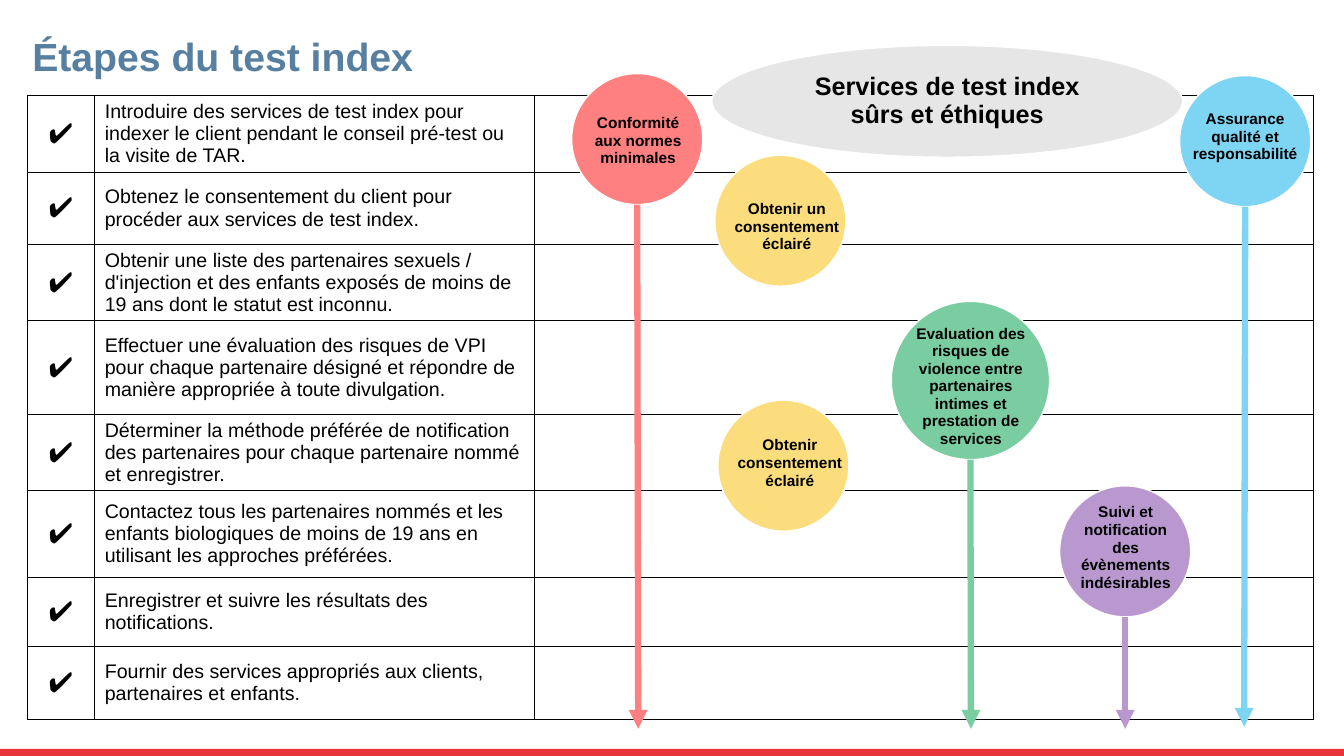
from lxml import etree
from pptx import Presentation
from pptx.dml.color import RGBColor
from pptx.enum.shapes import MSO_CONNECTOR, MSO_SHAPE
from pptx.enum.text import MSO_ANCHOR, MSO_AUTO_SIZE, PP_ALIGN
from pptx.oxml.ns import qn
from pptx.util import Inches, Pt

ELLIPSE, RECTANGLE = MSO_SHAPE.OVAL, MSO_SHAPE.RECTANGLE
STRAIGHT = MSO_CONNECTOR.STRAIGHT
MIDDLE, BOTTOM = MSO_ANCHOR.MIDDLE, MSO_ANCHOR.BOTTOM
LEFT, CENTER = PP_ALIGN.LEFT, PP_ALIGN.CENTER

TITLE = "Étapes du test index"
HEADING = "Services de test index sûrs et éthiques"
CHECK = "✔"
HEADER_HEIGHT = 0.57
COLUMN_WIDTHS = (0.67, 4.36, 7.73)

# Step, row height
STEPS = [
    ("Introduire des services de test index pour indexer le client pendant "
     "le conseil pré-test ou la visite de TAR.", 0.72),
    ("Obtenez le consentement du client pour procéder aux services de test index.", 0.72),
    ("Obtenir une liste des partenaires sexuels / d'injection et des enfants "
     "exposés de moins de 19 ans dont le statut est inconnu.", 0.72),
    ("Effectuer une évaluation des risques de VPI pour chaque partenaire désigné "
     "et répondre de manière appropriée à toute divulgation.", 0.93),
    ("Déterminer la méthode préférée de notification des partenaires pour chaque "
     "partenaire nommé et enregistrer.", 0.72),
    ("Contactez tous les partenaires nommés et les enfants biologiques de moins "
     "de 19 ans en utilisant les approches préférées.", 0.86),
    ("Enregistrer et suivre les résultats des notifications.", 0.69),
    ("Fournir des services appropriés aux clients, partenaires et enfants.", 0.72),
]

# Label, colour, circle (left, top, diameter), label box, arrow tip or None
SERVICES = [
    ("Conformité aux normes minimales", "FF8080",
     (5.67, 0.73, 1.3), (5.86, 0.93, 0.94, 0.94), (6.33, 7.23)),
    ("Evaluation des risques de violence entre partenaires intimes et "
     "prestation de services", "7ACDA0",
     (8.84, 2.99, 1.57), (9.06, 3.28, 1.14, 1.11), (9.63, 7.23)),
    ("Assurance qualité et responsabilité", "7DD4F3",
     (11.7, 0.75, 1.3), (11.75, 0.91, 1.2, 0.9), (12.34, 7.21)),
    ("Suivi et notification des évènements indésirables", "B998D0",
     (10.51, 4.82, 1.3), (10.59, 4.97, 1.15, 0.93), (11.16, 7.23)),
    ("Obtenir consentement éclairé", "FCDD7D",
     (7.12, 3.97, 1.3), (7.15, 4.09, 1.37, 1.01), None),
    ("Obtenir un consentement éclairé", "FCDD7D",
     (7.09, 1.54, 1.3), (7.09, 1.64, 1.43, 1.22), None),
]


def rgb(value):
    return RGBColor.from_string(value)


def inches(*values):
    return [Inches(value) for value in values]


def write(frame, text, size, color="000000", bold=False, align=CENTER,
          spacing=None, font_name="Arial"):
    frame.text = text
    paragraph = frame.paragraphs[0]
    paragraph.alignment = align
    if spacing:
        paragraph.line_spacing = spacing
    font = paragraph.runs[0].font
    font.name, font.size, font.bold = font_name, Pt(size), bold
    font.color.rgb = rgb(color)
    return paragraph


def add_filled(kind, box, fill, outline=None):
    shape = slide.shapes.add_shape(kind, *inches(*box))
    shape.shadow.inherit = False
    shape.fill.solid()
    shape.fill.fore_color.rgb = rgb(fill)
    if outline:
        shape.line.color.rgb = rgb(outline)
        shape.line.width = Pt(1)
    else:
        shape.line.fill.background()
    return shape


def set_borders(cell, visible):
    """Draw the sides named in visible (L, R, T, B) and hide the others."""
    properties = cell._tc.get_or_add_tcPr()
    for index, side in enumerate("LRTB"):
        border = etree.Element(qn(f"a:ln{side}"), w=str(Pt(0.5)))
        if side in visible:
            fill = etree.SubElement(border, qn("a:solidFill"))
            etree.SubElement(fill, qn("a:srgbClr"), val="000000")
        else:
            etree.SubElement(border, qn("a:noFill"))
        properties.insert(index, border)


def add_arrow(start, tip, color):
    arrow = slide.shapes.add_connector(STRAIGHT, *inches(*start, *tip))
    arrow.line.color.rgb = rgb(color)
    arrow.line.width = Pt(4.5)
    etree.SubElement(arrow.line._get_or_add_ln(), qn("a:tailEnd"), type="triangle")
    etree.SubElement(arrow._element.spPr, qn("a:effectLst"))


presentation = Presentation()
presentation.slide_width, presentation.slide_height = inches(13.33, 7.5)
slide = presentation.slides.add_slide(presentation.slide_layouts[5])

# Title
title = slide.shapes.title
title.left, title.top, title.width, title.height = inches(0.22, 0.29, 5.04, 0.55)
title.text_frame.auto_size = MSO_AUTO_SIZE.NONE
title.text_frame.vertical_anchor = BOTTOM
write(title.text_frame, TITLE, 28, "577F9F", True, LEFT, 0.9)

# Table of steps, under an open header row
heights = [HEADER_HEIGHT] + [height for _, height in STEPS]
table = slide.shapes.add_table(
    len(heights), len(COLUMN_WIDTHS),
    *inches(0.27, 0.38, sum(COLUMN_WIDTHS), sum(heights))).table
table.first_row = table.horz_banding = False
for column, width in zip(table.columns, COLUMN_WIDTHS):
    column.width = Inches(width)
for index, height in enumerate(heights):
    table.rows[index].height = Inches(height)
    for cell in table.rows[index].cells:
        cell.fill.background()
        cell.vertical_anchor = MIDDLE
        set_borders(cell, "LRTB" if index else "B")
table.cell(0, 0).merge(table.cell(0, 2))
for index, (step, _) in enumerate(STEPS, start=1):
    write(table.cell(index, 0).text_frame, CHECK, 20, font_name="Calibri")
    write(table.cell(index, 1).text_frame, step, 14, align=LEFT)

# Service circles with their labels and arrows
for label, color, (left, top, diameter), label_box, tip in SERVICES:
    add_filled(ELLIPSE, (left, top, diameter, diameter), color, "FFFFFF")
    frame = slide.shapes.add_textbox(*inches(*label_box)).text_frame
    frame.word_wrap = True
    frame.vertical_anchor = MIDDLE
    frame.margin_left = frame.margin_right = Inches(0.02)
    frame.margin_top = frame.margin_bottom = Inches(0.02)
    write(frame, label, 11, bold=True, spacing=0.95)
    if tip:
        add_arrow((left + diameter / 2, top + diameter), tip, color)

# Heading ellipse
heading = add_filled(ELLIPSE, (7.06, 0.45, 4.67, 1.11), "E7E6E6", "FFFFFF")
heading.text_frame.vertical_anchor = MIDDLE
write(heading.text_frame, HEADING, 18, bold=True, spacing=0.9).space_after = Pt(6)

# Bottom band
add_filled(RECTANGLE, (0, 7.43, 13.33, 0.07), "E73439")

presentation.save("out.pptx")
